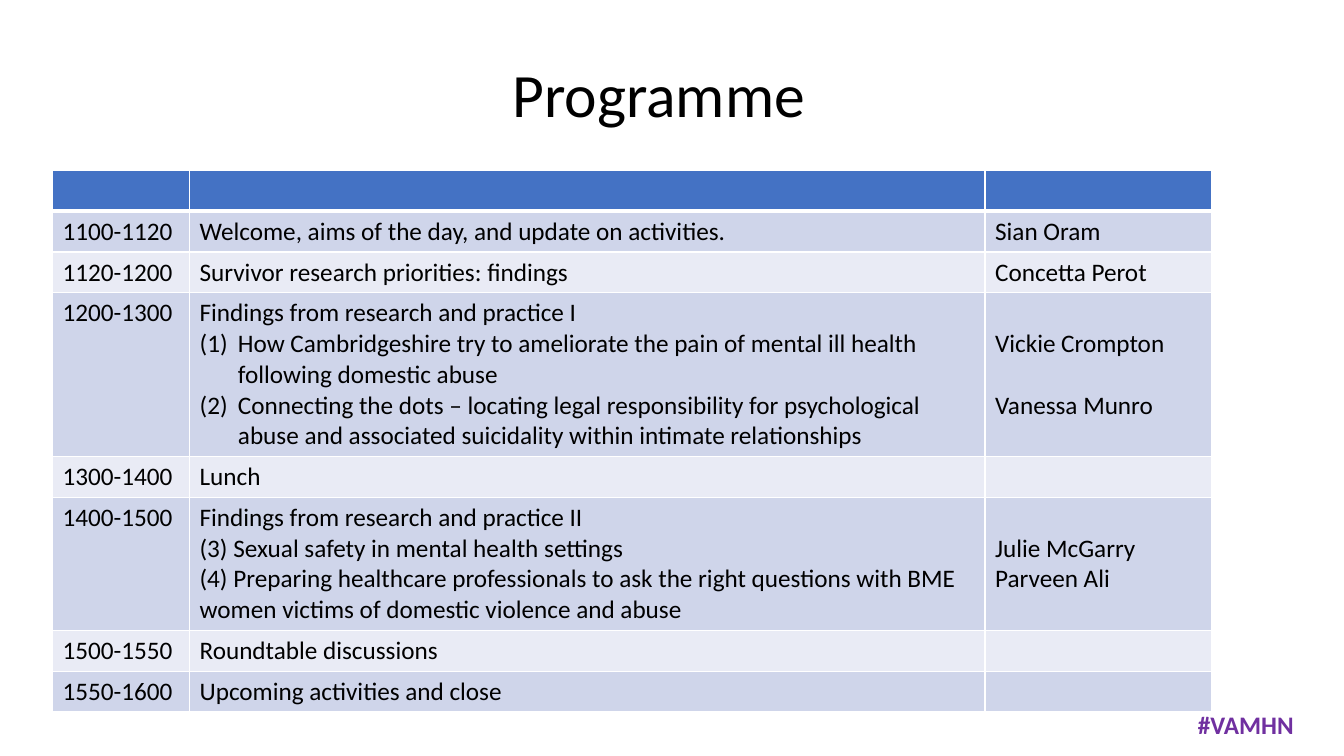
from lxml.etree import SubElement
from pptx import Presentation
from pptx.dml.color import RGBColor
from pptx.enum.text import MSO_ANCHOR, PP_ALIGN
from pptx.oxml.ns import qn
from pptx.util import Inches, Pt

FONT = "Calibri"
LINE_HEIGHT = 0.305
CELL_MARGIN = 0.05
COLUMN_WIDTHS = (1.36, 7.89, 2.25)
HEADER_FILL = "4472C4"
BAND_FILLS = ("E9EBF5", "CFD5EA")

SESSIONS = [
    ("1100-1120", ["Welcome, aims of the day, and update on activities."], ["Sian Oram"]),
    ("1120-1200", ["Survivor research priorities: findings"], ["Concetta Perot"]),
    ("1200-1300", [
        "Findings from research and practice I",
        "How Cambridgeshire try to ameliorate the pain of mental ill health "
        "following domestic abuse",
        "Connecting the dots – locating legal responsibility for psychological "
        "abuse and associated suicidality within intimate relationships",
    ], ["Vickie Crompton", "Vanessa Munro"]),
    ("1300-1400", ["Lunch"], []),
    ("1400-1500", [
        "Findings from research and practice II",
        "(3) Sexual safety in mental health settings",
        "(4) Preparing healthcare professionals to ask the right questions with BME "
        "women victims of domestic violence and abuse",
    ], ["Julie McGarry", "Parveen Ali"]),
    ("1500-1550", ["Roundtable discussions"], []),
    ("1550-1600", ["Upcoming activities and close"], []),
]
LINE_COUNTS = {"1200-1300": 5, "1400-1500": 4}
NUMBERED_SESSION = "1200-1300"


def rgb(value):
    """Turn a hex string into a colour."""
    return RGBColor.from_string(value)


def style(paragraph, size, colour="000000", bold=False):
    """Set the font of a whole paragraph."""
    font = paragraph.font
    font.name, font.size, font.bold = FONT, Pt(size), bold
    font.color.rgb = rgb(colour)


def number(paragraph):
    """Give a paragraph a hanging (1), (2) number."""
    properties = paragraph._p.get_or_add_pPr()
    properties.set("marL", str(Inches(0.38)))
    properties.set("indent", str(-Inches(0.38)))
    SubElement(properties, qn("a:buFont"), typeface="+mj-lt")
    SubElement(properties, qn("a:buAutoNum"), type="arabicParenBoth")


def paint(cell, fill, bottom_width=1):
    """Give a cell white borders and a solid fill."""
    properties = cell._tc.get_or_add_tcPr()
    for side in "LRTB":
        width = bottom_width if side == "B" else 1
        border = SubElement(properties, qn(f"a:ln{side}"), w=str(Pt(width)))
        SubElement(SubElement(border, qn("a:solidFill")), qn("a:srgbClr"), val="FFFFFF")
    cell.fill.solid()
    cell.fill.fore_color.rgb = rgb(fill)


def write(cell, lines, numbered=False, gap=0):
    """Write one paragraph per line into a cell."""
    if not lines:
        style(cell.text_frame.paragraphs[0], 18)
    for index, line in enumerate(lines):
        paragraphs = cell.text_frame
        paragraph = paragraphs.add_paragraph() if index else paragraphs.paragraphs[0]
        if index and numbered:
            number(paragraph)
        if index and gap:
            paragraph.space_before = Pt(gap)
        paragraph.text = line
        style(paragraph, 18)


def add_line(slide, text, box, size, align, colour="000000", bold=False,
             anchor=MSO_ANCHOR.TOP, spacing=1.0):
    """Place a single line of text in a box."""
    frame = slide.shapes.add_textbox(*map(Inches, box)).text_frame
    frame.word_wrap = True
    frame.vertical_anchor = anchor
    paragraph = frame.paragraphs[0]
    paragraph.text = text
    paragraph.alignment = align
    paragraph.line_spacing = spacing
    style(paragraph, size, colour, bold)


def add_programme(slide, left, top):
    """Place the timetable with its top left corner at the given point."""
    heights = [LINE_HEIGHT * LINE_COUNTS.get(time, 1) + 2 * CELL_MARGIN
               for time, _, _ in [("", [], []), *SESSIONS]]
    box = (left, top, sum(COLUMN_WIDTHS), sum(heights))
    table = slide.shapes.add_table(
        len(heights), len(COLUMN_WIDTHS), *map(Inches, box)).table
    for column, width in zip(table.columns, COLUMN_WIDTHS):
        column.width = Inches(width)
    for row, height in zip(table.rows, heights):
        row.height = Inches(height)

    for cell in table.rows[0].cells:
        paint(cell, HEADER_FILL, bottom_width=3)
        write(cell, [])
    for index, (time, topics, speakers) in enumerate(SESSIONS, start=1):
        time_cell, topic_cell, speaker_cell = table.rows[index].cells
        for cell in (time_cell, topic_cell, speaker_cell):
            paint(cell, BAND_FILLS[index % 2])
        numbered = time == NUMBERED_SESSION
        write(time_cell, [time])
        write(topic_cell, topics, numbered=numbered)
        write(speaker_cell, speakers, gap=22 if numbered else 0)
        if len(topics) > 1:
            speaker_cell.margin_top = Inches(CELL_MARGIN + LINE_HEIGHT)


def main():
    """Build and save the programme slide."""
    deck = Presentation()
    deck.slide_width, deck.slide_height = Inches(13.33), Inches(7.5)
    slide = deck.slides.add_slide(deck.slide_layouts[6])
    add_line(slide, "Programme", (0.65, 0.24, 11.77, 1.45), 44, PP_ALIGN.CENTER,
             anchor=MSO_ANCHOR.MIDDLE, spacing=0.9)
    add_programme(slide, 0.52, 1.69)
    add_line(slide, "#VAMHN", (10.13, 6.99, 2.8, 0.4), 18, PP_ALIGN.RIGHT,
             colour="7030A0", bold=True)
    deck.save("out.pptx")


if __name__ == "__main__":
    main()
